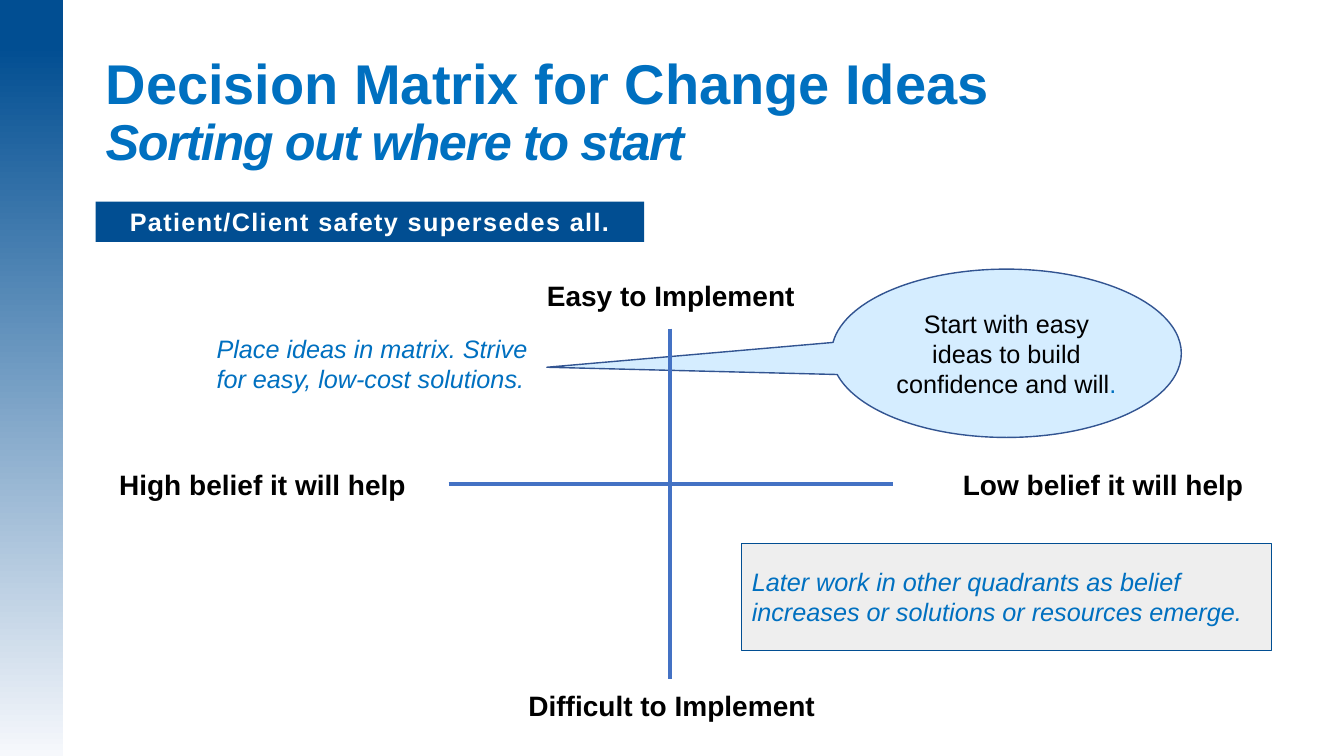
from dataclasses import dataclass

from lxml import etree
from pptx import Presentation
from pptx import util as u
from pptx.dml.color import RGBColor
from pptx.enum import shapes, text
from pptx.oxml.ns import qn

WIDTH, HEIGHT = u.Inches(13.33), u.Inches(7.5)
COLUMNS, ROWS = 40, 22.5
NAVY, BLUE, AXIS_BLUE = "014E92", "0070C0", "4472C4"
BLACK, WHITE = "000000", "FFFFFF"
LEFT, CENTER = text.PP_ALIGN.LEFT, text.PP_ALIGN.CENTER


@dataclass(frozen=True)
class Area:
    column: float
    row: float
    columns: float
    rows: float


@dataclass(frozen=True)
class Style:
    size: float
    color: str
    bold: bool = False
    italic: bool = False
    align: text.PP_ALIGN = LEFT


@dataclass(frozen=True)
class Caption:
    wording: str
    area: Area
    style: Style


@dataclass(frozen=True)
class Panel:
    kind: shapes.MSO_SHAPE
    area: Area
    fill: str
    outline: str = ""
    outline_width: float = 0


@dataclass(frozen=True)
class Axis:
    start: tuple[float, float]
    end: tuple[float, float]


AXIS_LABEL = Style(20, BLACK, bold=True, align=CENTER)
ADVICE = Style(18, BLUE, italic=True)
CALLOUT_TEXT = Style(18, BLACK, align=CENTER)
BANNER_TEXT = Style(18, WHITE, bold=True, align=CENTER)
HEADING = Style(40, BLUE, bold=True)

CAPTIONS = [
    Caption("Difficult to Implement", Area(12.12, 20.34, 15.75, 1.32), AXIS_LABEL),
    Caption("Easy to Implement", Area(14.31, 8.13, 11.31, 1.32), AXIS_LABEL),
    Caption("High belief it will help", Area(2.55, 13.77, 10.53, 1.32), AXIS_LABEL),
    Caption("Low belief it will help", Area(27.84, 13.77, 9.99, 1.32), AXIS_LABEL),
    Caption("Place ideas in matrix. Strive for easy, low-cost solutions.",
            Area(6.15, 9.78, 10.86, 2.13), ADVICE),
]
LATER = Panel(shapes.MSO_SHAPE.RECTANGLE, Area(22.08, 16.17, 15.75, 3.18),
              "D9D9D9", NAVY, 0.75)
CALLOUT = Panel(shapes.MSO_SHAPE.OVAL_CALLOUT, Area(24.75, 8.01, 10.41, 5.01),
                "D5EDFF", "325491", 1)
SIDEBAR = Panel(shapes.MSO_SHAPE.RECTANGLE, Area(0, 0, 1.89, ROWS), NAVY)
BANNER = Panel(shapes.MSO_SHAPE.RECTANGLE, Area(2.85, 6, 16.32, 1.2), NAVY)
AXES = [
    Axis((19.95, 9.78), (19.95, 20.22)),
    Axis((13.35, 14.4), (26.58, 14.4)),
]


def rgb(color: str) -> RGBColor:
    return RGBColor.from_string(color)


def across(columns: float) -> int:
    return round(WIDTH * columns / COLUMNS)


def down(rows: float) -> int:
    return round(HEIGHT * rows / ROWS)


def place(area: Area) -> tuple[int, int, int, int]:
    return across(area.column), down(area.row), across(area.columns), down(area.rows)


def write(frame, wording: str, style: Style):
    frame.word_wrap = True
    paragraph = frame.paragraphs[0]
    paragraph.alignment = style.align
    font = paragraph.font
    font.name, font.size = "Arial", u.Pt(style.size)
    font.bold, font.italic = style.bold, style.italic
    font.color.rgb = rgb(style.color)
    paragraph.add_run().text = wording
    return paragraph


def track(run, points: float) -> None:
    run._r.get_or_add_rPr().set("spc", str(round(points * 100)))


def draw_caption(slide, caption: Caption):
    box = slide.shapes.add_textbox(*place(caption.area))
    return box.text_frame, write(box.text_frame, caption.wording, caption.style)


def draw_panel(slide, panel: Panel):
    shape = slide.shapes.add_shape(panel.kind, *place(panel.area))
    shape.shadow.inherit = False
    shape.fill.solid()
    shape.fill.fore_color.rgb = rgb(panel.fill)
    if panel.outline:
        shape.line.color.rgb = rgb(panel.outline)
        shape.line.width = u.Pt(panel.outline_width)
    else:
        shape.line.fill.background()
    shape.text_frame.vertical_anchor = text.MSO_ANCHOR.MIDDLE
    return shape


def draw_axis(slide, axis: Axis) -> None:
    (x1, y1), (x2, y2) = axis.start, axis.end
    line = slide.shapes.add_connector(
        shapes.MSO_CONNECTOR.STRAIGHT, across(x1), down(y1), across(x2), down(y2))
    line.line.color.rgb = rgb(AXIS_BLUE)
    line.line.width = u.Pt(3)
    etree.SubElement(line._element.spPr, qn("a:effectLst"))


def draw_title(slide) -> None:
    frame, title = draw_caption(slide, Caption(
        "Decision Matrix for Change Ideas", Area(2.85, 1.68, 30.93, 4.77), HEADING))
    frame.margin_top = 0
    title.line_spacing = 0.9
    title.add_line_break()
    subtitle = title.add_run()
    subtitle.text = "Sorting out where to start"
    subtitle.font.size = u.Pt(36)
    subtitle.font.italic = True
    track(subtitle, -1)


def draw_later(slide) -> None:
    later = draw_panel(slide, LATER)
    tint = later.fill._xPr.find(f"{qn('a:solidFill')}/{qn('a:srgbClr')}")
    etree.SubElement(tint, qn("a:alpha"), val="44000")
    write(later.text_frame, "Later work in other quadrants as belief increases "
          "or solutions or resources emerge.", ADVICE)


def draw_callout(slide) -> None:
    callout = draw_panel(slide, CALLOUT)
    callout.adjustments[0] = -1.314
    callout.adjustments[1] = 0.083
    advice = write(callout.text_frame,
                   "Start with easy ideas to build confidence and will", CALLOUT_TEXT)
    full_stop = advice.add_run()
    full_stop.text = "."
    full_stop.font.color.rgb = rgb(BLUE)


def draw_sidebar(slide) -> None:
    fill = draw_panel(slide, SIDEBAR).fill
    fill.gradient()
    fill.gradient_angle = 270
    for stop, (position, color) in zip(fill.gradient_stops, [(0.06, NAVY), (1, "F6F8FC")]):
        stop.position = position
        stop.color.rgb = rgb(color)


def draw_banner(slide) -> None:
    banner = draw_panel(slide, BANNER)
    safety = write(banner.text_frame, "Patient/Client safety supersedes all.", BANNER_TEXT)
    track(safety.runs[0], 1)


def main() -> None:
    deck = Presentation()
    deck.slide_width, deck.slide_height = WIDTH, HEIGHT
    slide = deck.slides.add_slide(deck.slide_layouts[6])
    draw_title(slide)
    for caption in CAPTIONS:
        draw_caption(slide, caption)
    draw_later(slide)
    draw_callout(slide)
    draw_sidebar(slide)
    draw_banner(slide)
    for axis in AXES:
        draw_axis(slide, axis)
    deck.save("out.pptx")


if __name__ == "__main__":
    main()
